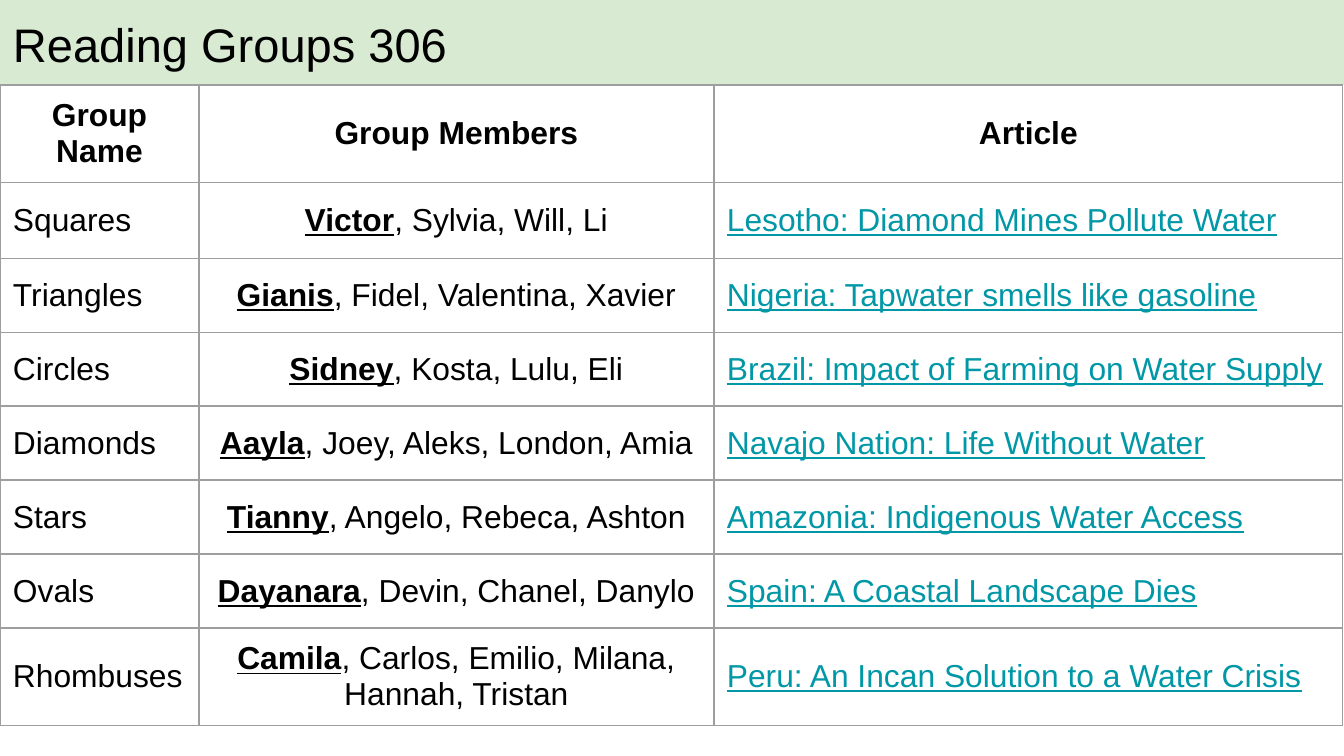
from lxml import etree
from pptx import Presentation, util as u
from pptx.dml.color import RGBColor
from pptx.enum import shapes, text
from pptx.oxml.ns import qn

PX = 914400 / 134.4
BLACK = RGBColor(0x00, 0x00, 0x00)
WHITE = RGBColor(0xFF, 0xFF, 0xFF)
GREEN = RGBColor(0xD9, 0xEA, 0xD3)
TEAL = RGBColor(0x00, 0x97, 0xA7)
GREY = RGBColor(0x9E, 0x9E, 0x9E)
LEFT, CENTER = text.PP_ALIGN.LEFT, text.PP_ALIGN.CENTER


def px(n):
    return u.Emu(round(n * PX))


def add_text(p, content, size=17, color=BLACK, bold=False, underline=False, align=LEFT):
    p.alignment = align
    r = p.add_run()
    r.text = content
    r.font.name = "Arial"
    r.font.size = u.Pt(size)
    r.font.color.rgb = color
    r.font.bold = bold
    r.font.underline = underline


prs = Presentation()
prs.slide_width, prs.slide_height = px(1344), px(756)
s = prs.slides.add_slide(prs.slide_layouts[6])

title = s.shapes.add_shape(shapes.MSO_SHAPE.RECTANGLE, 0, 0, px(1344), px(85))
title.shadow.inherit = False
title.fill.solid()
title.fill.fore_color.rgb = GREEN
title.line.fill.background()
tf = title.text_frame
tf.word_wrap = True
tf.vertical_anchor = text.MSO_ANCHOR.BOTTOM
tf.margin_left = tf.margin_right = tf.margin_top = tf.margin_bottom = px(13)
add_text(tf.paragraphs[0], "Reading Groups 306", size=25.2)

headings = ["Group Name", "Group Members", "Article"]
groups = [
    ("Squares", "Victor", ", Sylvia, Will, Li", "Lesotho: Diamond Mines Pollute Water"),
    ("Triangles", "Gianis", ", Fidel, Valentina, Xavier", "Nigeria: Tapwater smells like gasoline"),
    ("Circles", "Sidney", ", Kosta, Lulu, Eli", "Brazil: Impact of Farming on Water Supply"),
    ("Diamonds", "Aayla", ", Joey, Aleks, London, Amia", "Navajo Nation: Life Without Water"),
    ("Stars", "Tianny", ", Angelo, Rebeca, Ashton", "Amazonia: Indigenous Water Access"),
    ("Ovals", "Dayanara", ", Devin, Chanel, Danylo", "Spain: A Coastal Landscape Dies"),
    ("Rhombuses", "Camila", ", Carlos, Emilio, Milana, Hannah, Tristan",
     "Peru: An Incan Solution to a Water Crisis"),
]
col_widths = [199, 515, 629]
row_heights = [76, 76] + [74] * 6

frame = s.shapes.add_table(len(row_heights), len(col_widths), 0, px(85),
                           px(sum(col_widths)), px(sum(row_heights)))
table = frame.table
table.first_row = table.horz_banding = False
for col, width in zip(table.columns, col_widths):
    col.width = px(width)
for row, height in zip(table.rows, row_heights):
    row.height = px(height)

for cell in table.iter_cells():
    cell.vertical_anchor = text.MSO_ANCHOR.MIDDLE
    cell.margin_left = cell.margin_right = cell.margin_top = cell.margin_bottom = px(13)
    tcPr = cell._tc.get_or_add_tcPr()
    for side in ("a:lnL", "a:lnR", "a:lnT", "a:lnB"):
        ln = etree.SubElement(tcPr, qn(side), w=str(u.Pt(0.75)))
        fill = etree.SubElement(ln, qn("a:solidFill"))
        etree.SubElement(fill, qn("a:srgbClr"), val=str(GREY))
    cell.fill.solid()
    cell.fill.fore_color.rgb = WHITE

for c, heading in enumerate(headings):
    add_text(table.cell(0, c).text_frame.paragraphs[0], heading, bold=True, align=CENTER)

for i, (name, leader, members, article) in enumerate(groups, 1):
    name_p, members_p, article_p = [table.cell(i, c).text_frame.paragraphs[0] for c in range(3)]
    add_text(name_p, name)
    add_text(members_p, leader, bold=True, underline=True, align=CENTER)
    add_text(members_p, members, align=CENTER)
    add_text(article_p, article, color=TEAL, underline=True)

prs.save("out.pptx")
